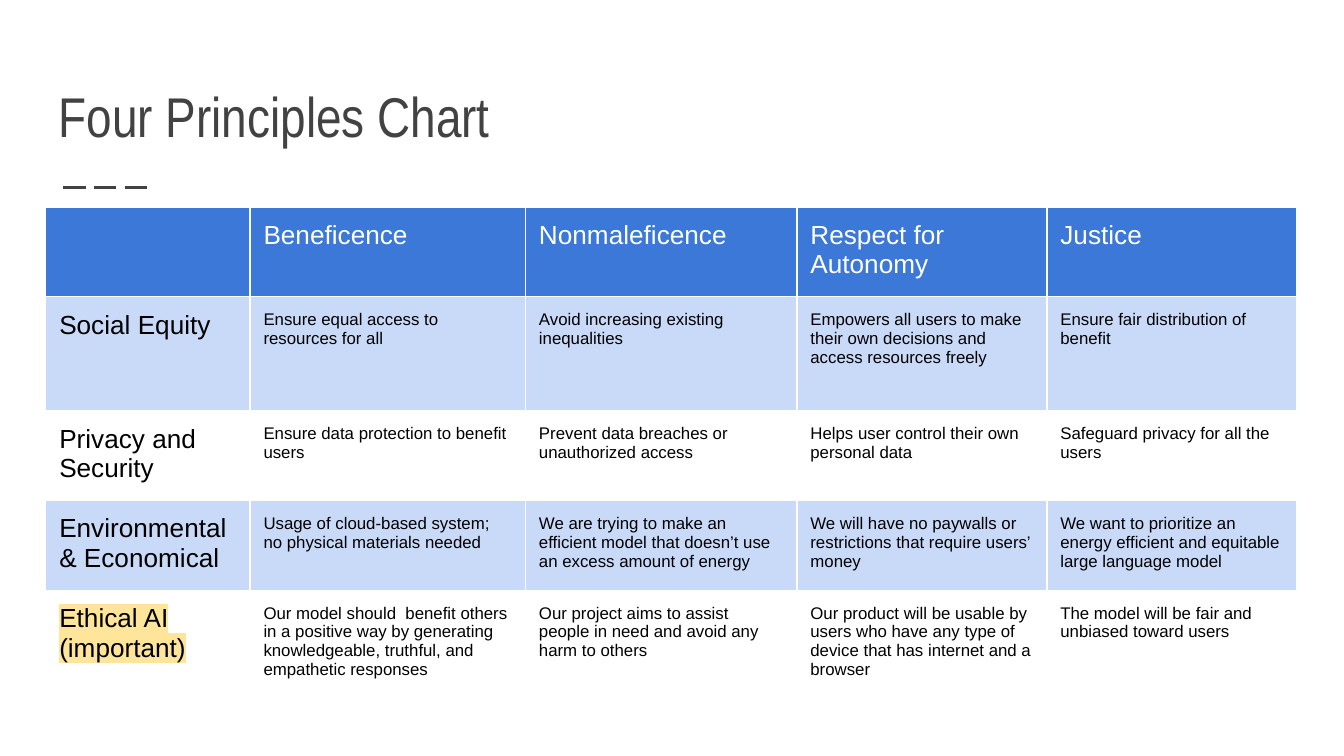
from copy import deepcopy
from dataclasses import dataclass
from typing import Optional

from lxml import etree
from pptx import Presentation, util as u
from pptx.dml.color import RGBColor
from pptx.enum import dml, shapes, text
from pptx.oxml.ns import qn

W = 10
H = W * 9 / 16
LEFT = 0.0341 * W
INSET = 0.01 * W
GREY, WHITE, BLACK = "424242", "FFFFFF", "000000"
BLUE, PALE, YELLOW = "3C78D8", "C9DAF8", "FFE599"
COLUMNS = (1.52, 2.05, 2.02, 1.86, 1.86)


@dataclass
class Row:
    height: float
    cells: tuple[str, ...]
    fill: Optional[str] = None
    highlight: Optional[str] = None


HEADER = Row(0.65, ("", "Beneficence", "Nonmaleficence", "Respect for\nAutonomy", "Justice"), BLUE)
BODY = [
    Row(0.85, ("Social Equity",
               "Ensure equal access to resources for all",
               "Avoid increasing existing inequalities",
               "Empowers all users to make their own decisions and access resources freely",
               "Ensure fair distribution of benefit"), PALE),
    Row(0.55, ("Privacy and Security",
               "Ensure data protection to benefit users",
               "Prevent data breaches or unauthorized access",
               "Helps user control their own personal data",
               "Safeguard privacy for all the users")),
    Row(0.55, ("Environmental & Economical",
               "Usage of cloud-based system; no physical materials needed",
               "We are trying to make an efficient model that doesn’t use an excess amount of energy",
               "We will have no paywalls or restrictions that require users’ money",
               "We want to prioritize an energy efficient and equitable large language model"), PALE),
    Row(0.55, ("Ethical AI\n(important)",
               "Our model should  benefit others in a positive way by generating knowledgeable, "
               "truthful, and empathetic responses",
               "Our project aims to assist people in need and avoid any harm to others",
               "Our product will be usable by users who have any type of device that has internet "
               "and a browser",
               "The model will be fair and unbiased toward users"), highlight=YELLOW),
]


def rgb(value: str) -> RGBColor:
    return RGBColor.from_string(value)


def set_margins(target) -> None:
    for side in ("left", "right", "top", "bottom"):
        setattr(target, f"margin_{side}", u.Inches(INSET))


def write(tf, content: str, size: float, color: str, font: str = "Arial",
          highlight: Optional[str] = None) -> None:
    """Fill a text frame, one paragraph per line of content."""
    formats = {"size": u.Pt(size), "name": font}
    for i, line in enumerate(content.split("\n")):
        p = tf.add_paragraph() if i else tf.paragraphs[0]
        r = p.add_run()
        r.text = line
        for name, value in formats.items():
            setattr(r.font, name, value)
        r.font.color.rgb = rgb(color)
        # The paragraph mark shares the run's format, so it cannot stretch the last line.
        end = etree.SubElement(p._p, qn("a:endParaRPr"), sz=str(size * 100))
        end.extend(deepcopy(list(r.font._element)))
        if highlight:
            mark = etree.Element(qn("a:highlight"))
            etree.SubElement(mark, qn("a:srgbClr"), val=highlight)
            r.font._element.find(qn("a:latin")).addprevious(mark)


def add_borders(cell, color: str, width: float) -> None:
    """Put the four side lines ahead of the cell's fill, as the schema asks."""
    tc_pr = cell._tc.get_or_add_tcPr()
    for i, side in enumerate(("lnL", "lnR", "lnT", "lnB")):
        ln = etree.Element(qn(f"a:{side}"), w=str(u.Pt(width)))
        fill = etree.SubElement(ln, qn("a:solidFill"))
        etree.SubElement(fill, qn("a:srgbClr"), val=color)
        tc_pr.insert(i, ln)


def add_title(s, content: str) -> None:
    sp = s.shapes.add_textbox(*map(u.Inches, (LEFT, 0.073 * H, W - 2 * LEFT, 0.142 * H)))
    tf = sp.text_frame
    tf.word_wrap = True
    tf.vertical_anchor = text.MSO_ANCHOR.BOTTOM
    set_margins(tf)
    write(tf, content, 30, GREY, "Arial Narrow")


def add_dashes(s) -> None:
    y = 0.248 * H
    line = s.shapes.add_connector(shapes.MSO_CONNECTOR.STRAIGHT,
                                  *map(u.Inches, (0.047 * W, y, 0.114 * W, y)))
    line.line.color.rgb = rgb(GREY)
    line.line.width = u.Pt(1.5)
    line.line.dash_style = dml.MSO_LINE.LONG_DASH
    etree.SubElement(line._element.spPr, qn("a:effectLst"))


def add_principles(s, rows: list[Row]) -> None:
    size = (sum(COLUMNS), sum(row.height for row in rows))
    table = s.shapes.add_table(len(rows), len(COLUMNS),
                               *map(u.Inches, (LEFT, 0.274 * H, *size))).table
    table.first_row = table.horz_banding = False
    for column, width in zip(table.columns, COLUMNS):
        column.width = u.Inches(width)
    for i, row in enumerate(rows):
        table.rows[i].height = u.Inches(row.height)
        for j, content in enumerate(row.cells):
            cell = table.cell(i, j)
            set_margins(cell)
            if row.fill:
                cell.fill.solid()
                cell.fill.fore_color.rgb = rgb(row.fill)
            else:
                cell.fill.background()
            add_borders(cell, WHITE, 0.75)
            is_heading = i == 0 or j == 0
            if content:
                write(cell.text_frame, content, 14 if is_heading else 9,
                      BLACK if i else WHITE, highlight=None if j else row.highlight)


def main() -> None:
    prs = Presentation()
    prs.slide_width, prs.slide_height = u.Inches(W), u.Inches(H)
    s = prs.slides.add_slide(prs.slide_layouts[6])
    add_dashes(s)
    add_title(s, "Four Principles Chart")
    add_principles(s, [HEADER, *BODY])
    prs.save("out.pptx")


if __name__ == "__main__":
    main()
